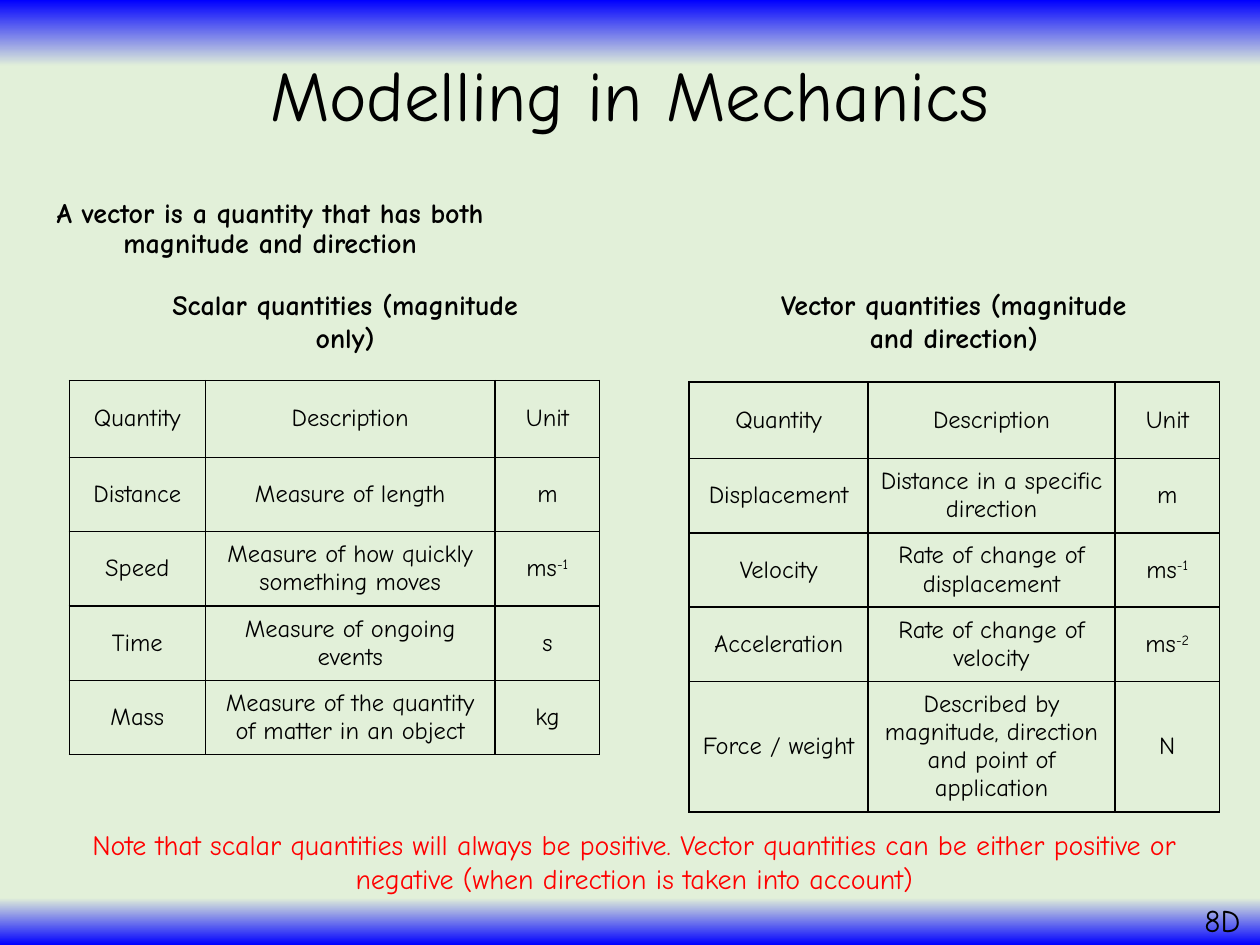
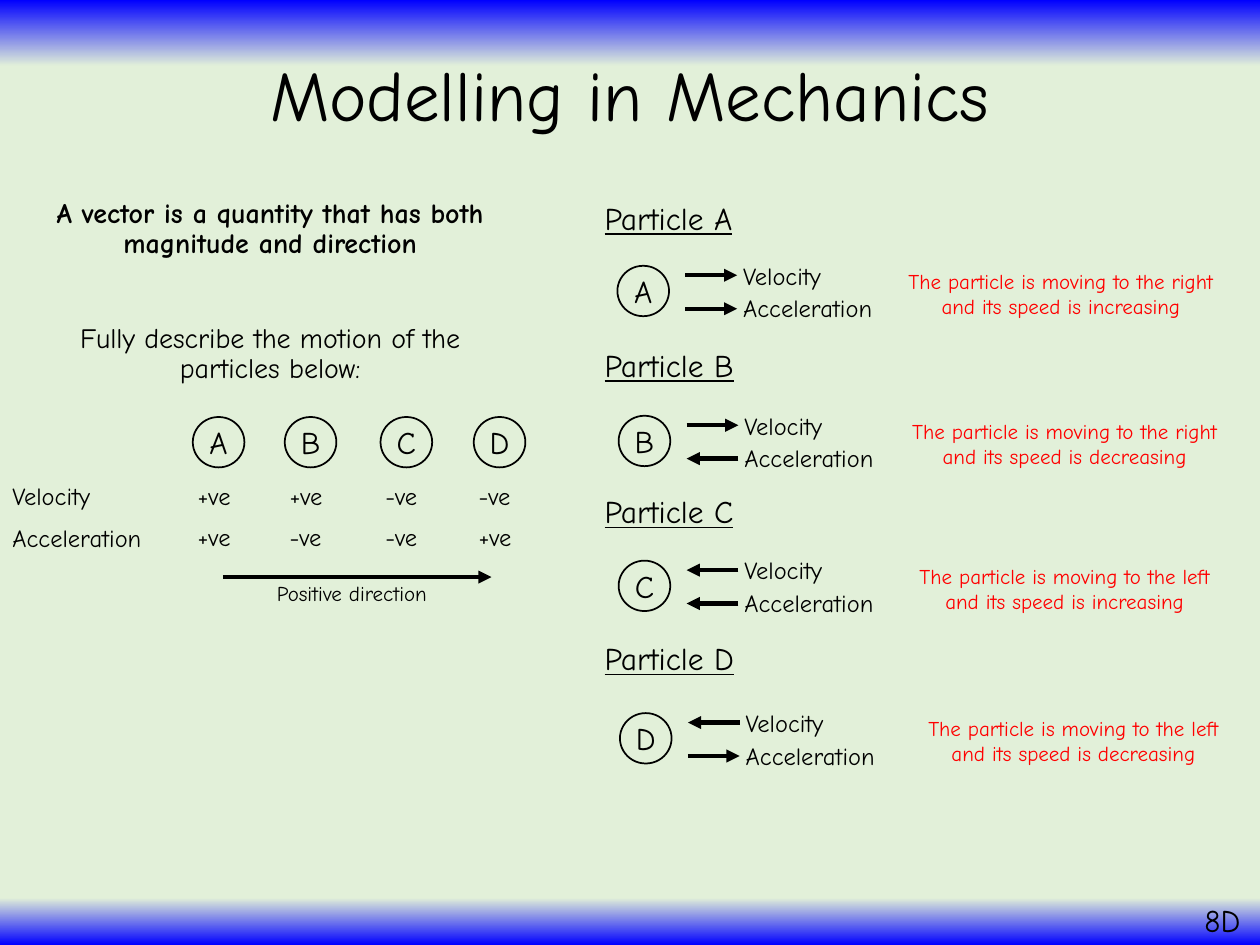
from dataclasses import dataclass

from lxml import etree
from pptx import Presentation
from pptx.dml.color import RGBColor
from pptx.enum.shapes import MSO_CONNECTOR, MSO_SHAPE
from pptx.enum.text import MSO_ANCHOR, MSO_AUTO_SIZE, PP_ALIGN
from pptx.oxml.ns import qn
from pptx.util import Inches, Pt

STRAIGHT = MSO_CONNECTOR.STRAIGHT
ELLIPSE = MSO_SHAPE.OVAL
TOP, MIDDLE = MSO_ANCHOR.TOP, MSO_ANCHOR.MIDDLE
GROW, FIXED = MSO_AUTO_SIZE.SHAPE_TO_FIT_TEXT, MSO_AUTO_SIZE.NONE
LEFT, CENTER = PP_ALIGN.LEFT, PP_ALIGN.CENTER

COLUMNS, ROWS = 100, 75
UNIT = 0.1


@dataclass(frozen=True)
class Theme:
    """Colours, font and type sizes shared by the slides."""
    font: str = "Comic Neue"
    ink: str = "000000"
    accent: str = "FF0000"
    band: str = "0000FF"
    paper: str = "E2F0D9"
    title: float = 40.5
    label: float = 18
    body: float = 16
    cell: float = 14
    small: float = 12
    thin: float = 1
    thick: float = 2.5


THEME = Theme()

TITLE = "Modelling in Mechanics"
SECTION = "8D"
DEFINITION = "A vector is a quantity that has both magnitude and direction"
TASK = "Fully describe the motion of the particles below:"
NOTE = ("Note that scalar quantities will always be positive. Vector quantities "
        "can be either positive or negative (when direction is taken into account)")

HEADER = ("Quantity", "Description", "Unit")
ROW_HEIGHTS = (6.1, 5.9, 5.9, 5.9, 5.9)
SCALARS = (
    HEADER,
    ("Distance", "Measure of length", "m"),
    ("Speed", "Measure of how quickly something moves", "ms^-1"),
    ("Time", "Measure of ongoing events", "s"),
    ("Mass", "Measure of the quantity of matter in an object", "kg"),
)
VECTORS = (
    HEADER,
    ("Displacement", "Distance in a specific direction", "m"),
    ("Velocity", "Rate of change of displacement", "ms^-1"),
    ("Acceleration", "Rate of change of velocity", "ms^-2"),
    ("Force / weight",
     "Described by magnitude, direction and point of application", "N"),
)


@dataclass(frozen=True)
class Particle:
    """A particle's signs and its places in the question and the answers."""
    name: str
    velocity: str
    acceleration: str
    question_left: float
    answer_left: float
    answer_top: float
    verdict_left: float

    def verdict(self):
        """Describe the motion that the two signs imply."""
        side = "right" if self.velocity == "+ve" else "left"
        same = self.velocity == self.acceleration
        change = "increasing" if same else "decreasing"
        return f"The particle is moving to the {side} and its speed is {change}"


PARTICLES = (
    Particle("A", "+ve", "+ve", 15.3, 49, 21.1, 70.2),
    Particle("B", "+ve", "-ve", 22.6, 49.1, 33, 70.5),
    Particle("C", "-ve", "-ve", 30.2, 49.1, 44.5, 70.5),
    Particle("D", "-ve", "+ve", 37.6, 49.2, 56.6, 71.2),
)


def grid(*cells):
    """Convert grid columns or rows to lengths."""
    return [Inches(cell * UNIT) for cell in cells]


def rgb(colour):
    """Turn a hex colour into an RGBColor."""
    return RGBColor.from_string(colour)


def style(paragraph, size, colour=THEME.ink, bold=False, underline=False,
          align=LEFT):
    """Set one paragraph's font and alignment."""
    paragraph.alignment = align
    font = paragraph.font
    font.name, font.size = THEME.font, Pt(size)
    font.bold, font.underline = bold, underline
    font.color.rgb = rgb(colour)


def add_text(slide, box, text, size, wrap=False, auto_size=GROW, anchor=TOP,
             **look):
    """Add a text box of one paragraph and return its frame."""
    frame = slide.shapes.add_textbox(*grid(*box)).text_frame
    frame.word_wrap, frame.auto_size = wrap, auto_size
    frame.vertical_anchor = anchor
    paragraph = frame.paragraphs[0]
    paragraph.text = text
    style(paragraph, size, **look)
    return frame


def paint_background(slide):
    """Fill the slide with paper between two fading bands."""
    fill = slide.background.fill
    fill.gradient()
    fill.gradient_angle = 270
    stops = slide.element.find(".//" + qn("a:gsLst"))
    for stop in list(stops):
        stops.remove(stop)
    for percent, colour in ((0, THEME.band), (7, THEME.paper),
                            (95, THEME.paper), (100, THEME.band)):
        stop = etree.SubElement(stops, qn("a:gs"), pos=str(percent * 1000))
        etree.SubElement(stop, qn("a:srgbClr"), val=colour)


def add_lesson_slide(deck):
    """Add a slide with the shared background, title, definition and section."""
    slide = deck.slides.add_slide(deck.slide_layouts[6])
    paint_background(slide)
    title = add_text(slide, (6.9, 2.4, 86.2, 10.9), TITLE, THEME.title, wrap=True,
                     auto_size=FIXED, anchor=MIDDLE, align=CENTER)
    title.paragraphs[0].line_spacing = 0.9
    body = add_text(slide, (1.6, 15.3, 39.7, 52.2), DEFINITION, THEME.body,
                    wrap=True, auto_size=FIXED, bold=True, align=CENTER)
    body.paragraphs[0].line_spacing = 0.9
    body.paragraphs[0].space_before = Pt(10)
    add_text(slide, (94.6, 71, 5.4, 4), SECTION, THEME.label)
    return slide, body


def add_borders(cell):
    """Draw a thin line on the four sides of a table cell."""
    properties = cell._tc.get_or_add_tcPr()
    for side in ("a:lnL", "a:lnR", "a:lnT", "a:lnB"):
        line = etree.SubElement(properties, qn(side), w=str(Pt(THEME.thin)))
        fill = etree.SubElement(line, qn("a:solidFill"))
        etree.SubElement(fill, qn("a:srgbClr"), val=THEME.ink)


def fill_cell(cell, text):
    """Write a centred cell, raising whatever follows a caret."""
    add_borders(cell)
    cell.fill.background()
    cell.vertical_anchor = MIDDLE
    paragraph = cell.text_frame.paragraphs[0]
    base, _, power = text.partition("^")
    paragraph.add_run().text = base
    if power:
        exponent = paragraph.add_run()
        exponent.text = power
        exponent._r.get_or_add_rPr().set("baseline", "30000")
    style(paragraph, THEME.cell, align=CENTER)


def add_quantities(slide, left, top, widths, rows):
    """Add a bordered table of quantities."""
    box = grid(left, top, sum(widths), sum(ROW_HEIGHTS))
    table = slide.shapes.add_table(len(rows), len(widths), *box).table
    table.first_row = table.horz_banding = False
    for column, width in zip(table.columns, grid(*widths)):
        column.width = width
    for row, height, texts in zip(table.rows, grid(*ROW_HEIGHTS), rows):
        row.height = height
        for cell, text in zip(row.cells, texts):
            fill_cell(cell, text)


def add_arrow(slide, start, end, level):
    """Add a horizontal arrow pointing from start to end."""
    arrow = slide.shapes.add_connector(STRAIGHT, *grid(start, level, end, level))
    arrow.line.color.rgb = rgb(THEME.ink)
    arrow.line.width = Pt(THEME.thick)
    etree.SubElement(arrow.line._get_or_add_ln(), qn("a:tailEnd"), type="triangle")
    etree.SubElement(arrow._element.spPr, qn("a:effectLst"))


def add_particle(slide, left, top, name):
    """Add a circled particle name."""
    circle = slide.shapes.add_shape(ELLIPSE, *grid(left, top, 4.1, 4))
    circle.shadow.inherit = False
    circle.fill.background()
    circle.line.color.rgb = rgb(THEME.ink)
    circle.line.width = Pt(THEME.thin)
    frame = circle.text_frame
    frame.word_wrap, frame.vertical_anchor = False, MIDDLE
    frame.margin_left = frame.margin_right = 0
    frame.margin_top = frame.margin_bottom = 0
    frame.text = name
    style(frame.paragraphs[0], THEME.label, align=CENTER)


def add_motion_labels(slide, left, velocity_top, acceleration_top):
    """Name the velocity and acceleration rows."""
    add_text(slide, (left, velocity_top, 9.5, 3.4), "Velocity", THEME.cell)
    add_text(slide, (left, acceleration_top, 13.7, 3.4), "Acceleration", THEME.cell)


def add_question(slide):
    """Show the signs of each particle and the positive direction."""
    add_motion_labels(slide, 0, 37.7, 41)
    for particle in PARTICLES:
        left = particle.question_left
        add_particle(slide, left, 33.1, particle.name)
        for sign, top in ((particle.velocity, 37.7), (particle.acceleration, 40.9)):
            add_text(slide, (left - 0.6, top, 5, 3.4), sign, THEME.cell)
    add_arrow(slide, 17.7, 39, 45.8)
    add_text(slide, (21, 45.6, 15.7, 3), "Positive direction", THEME.small)


def add_answer(slide, index, particle):
    """Show one particle's arrows and the description of its motion."""
    left, top = particle.answer_left, particle.answer_top
    add_text(slide, (47, 15.3 + 11.64 * index, 13.7, 4),
             f"Particle {particle.name}", THEME.label, underline=True)
    add_particle(slide, left, top, particle.name)
    ends = (left + 5.4, left + 9.5)
    for sign, drop in ((particle.velocity, 0.75), (particle.acceleration, 3.4)):
        start, end = ends if sign == "+ve" else reversed(ends)
        add_arrow(slide, start, end, top + drop)
    add_motion_labels(slide, left + 9, top - 0.9, top + 1.7)
    add_text(slide, (particle.verdict_left, top - 0.3, 28, 5), particle.verdict(),
             THEME.small, wrap=True, colour=THEME.accent, align=CENTER)


def build_quantities_slide(deck):
    """Compare scalar with vector quantities."""
    slide, _ = add_lesson_slide(deck)
    for left, heading in ((10.6, "Scalar quantities (magnitude only)"),
                          (58.9, "Vector quantities (magnitude and direction)")):
        add_text(slide, (left, 22.3, 33.6, 6.4), heading, THEME.body, wrap=True,
                 bold=True, align=CENTER)
    add_quantities(slide, 5.5, 30.2, (10.8, 23, 8.3), SCALARS)
    add_quantities(slide, 54.7, 30.3, (14.2, 19.6, 8.3), VECTORS)
    add_text(slide, (4.9, 65.2, 90.9, 6.4), NOTE, THEME.body, wrap=True,
             colour=THEME.accent, align=CENTER)


def build_particles_slide(deck):
    """Ask for and describe the motion of four particles."""
    slide, body = add_lesson_slide(deck)
    task = body.add_paragraph()
    task.text = TASK
    task.line_spacing, task.space_before = 0.9, Pt(37)
    style(task, THEME.body, align=CENTER)
    add_question(slide)
    for index, particle in enumerate(PARTICLES):
        add_answer(slide, index, particle)


def main():
    """Build and save the lesson."""
    deck = Presentation()
    deck.slide_width, deck.slide_height = grid(COLUMNS, ROWS)
    build_quantities_slide(deck)
    build_particles_slide(deck)
    deck.save("out.pptx")


if __name__ == "__main__":
    main()
